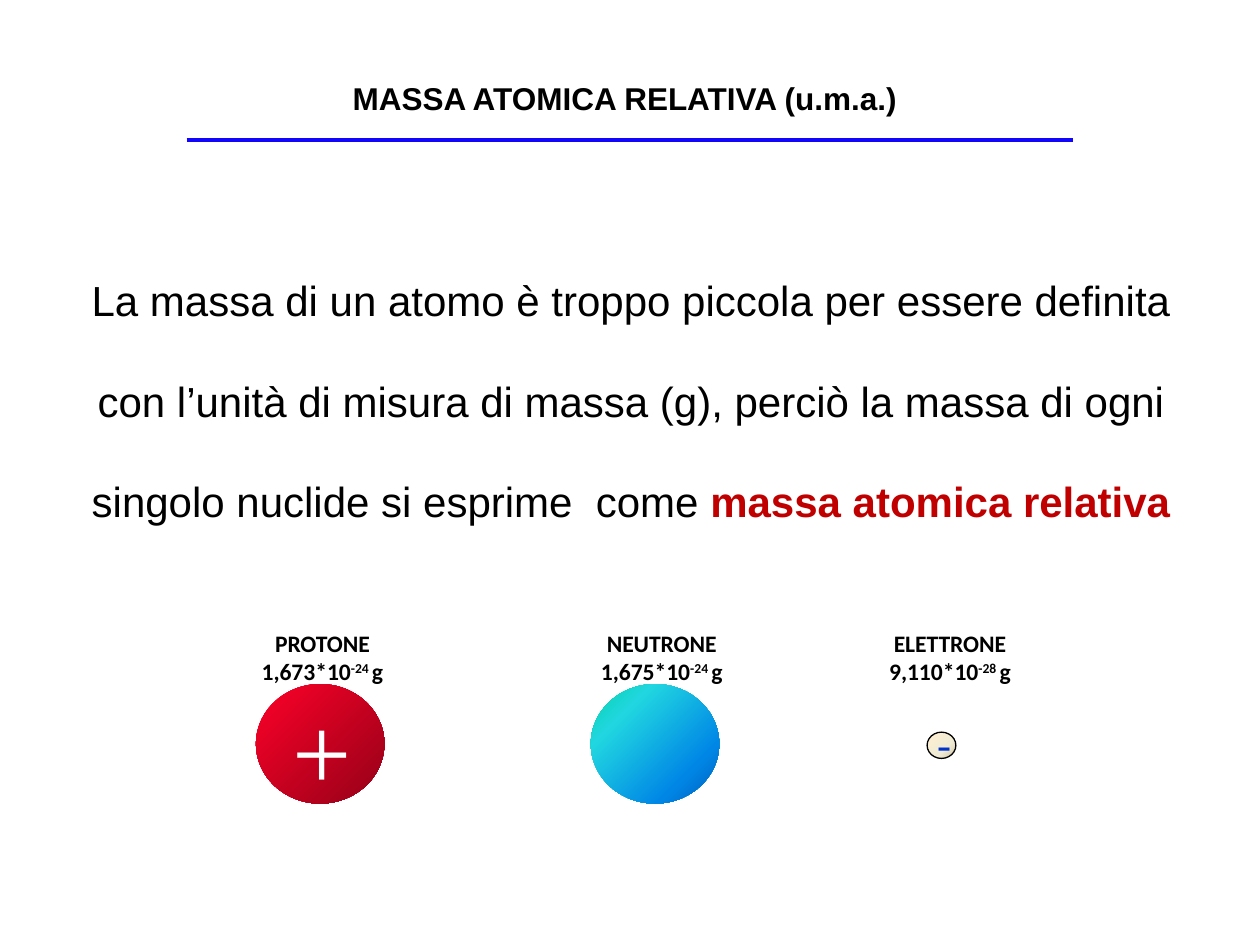
from dataclasses import dataclass

from lxml.etree import SubElement
from pptx import Presentation
from pptx.dml.color import RGBColor as Rgb
from pptx.enum.shapes import MSO_CONNECTOR as Connector, MSO_SHAPE as Shape
from pptx.enum.text import MSO_AUTO_SIZE as AutoSize, PP_ALIGN as Align
from pptx.oxml.ns import qn
from pptx.util import Cm, Pt


@dataclass(frozen=True)
class Theme:
    black: str = "000000"
    white: str = "FFFFFF"
    rule: str = "1206FA"
    accent: str = "C00000"
    minus: str = "0033CC"
    proton: tuple = ((0, "FC0128"), (100, "950118"))
    neutron: tuple = ((0, "03D4A8"), (25, "21D6E0"), (75, "0087E6"), (100, "005CBF"))
    electron: tuple = ((0, "FFEFD1"), (65, "F0EBD5"), (100, "D1C39F"))
    sans: str = "Arial"
    label_font: str = "Calibri"
    sign_font: str = "Times New Roman"
    title_size: float = 18
    body_size: float = 24
    label_size: float = 13.5
    minus_size: float = 24
    plus_size: float = 60


class SlideBuilder:
    """Draws styled elements on the current slide."""

    def __init__(self, slide, theme):
        self.shapes = slide.shapes
        self.theme = theme

    def rule(self, left, right, top):
        line = self.shapes.add_connector(
            Connector.STRAIGHT, Cm(left), Cm(top), Cm(right), Cm(top))
        line.line.color.rgb = Rgb.from_string(self.theme.rule)
        line.line.width = Pt(2.5)
        SubElement(line._element.spPr, qn("a:effectLst"))

    def text(self, bounds, lines, font, size, color=None, bold=False,
             align=Align.CENTER, spacing=None, wrap=True):
        box = self.shapes.add_textbox(*map(Cm, bounds))
        frame = box.text_frame
        frame.word_wrap = wrap
        frame.auto_size = AutoSize.SHAPE_TO_FIT_TEXT
        frame.text = "\n".join(lines)
        for para in frame.paragraphs:
            para.alignment = align
            para.line_spacing = spacing
            for span in para.runs:
                self.format(span, font, size, color, bold)
        return frame.paragraphs

    def format(self, span, font, size, color=None, bold=False):
        span.font.name = font
        span.font.size = Pt(size)
        span.font.bold = bold
        span.font.color.rgb = Rgb.from_string(color or self.theme.black)

    def body(self, bounds, plain, emphasis):
        theme = self.theme
        para = self.text(bounds, [plain], theme.sans, theme.body_size, spacing=2.0)[0]
        span = para.add_run()
        span.text = emphasis
        self.format(span, theme.sans, theme.body_size, theme.accent, True)

    def sphere(self, bounds, stops, outlined=False):
        ball = self.shapes.add_shape(Shape.OVAL, *map(Cm, bounds))
        ball.shadow.inherit = False
        ball.fill.gradient()
        ball.fill.gradient_angle = 315
        stop_list = ball._element.spPr.find(qn("a:gradFill")).find(qn("a:gsLst"))
        for old_stop in list(stop_list):
            stop_list.remove(old_stop)
        for percent, color in stops:
            stop = SubElement(stop_list, qn("a:gs"), pos=str(percent * 1000))
            SubElement(stop, qn("a:srgbClr"), val=color)
        if outlined:
            ball.line.color.rgb = Rgb.from_string(self.theme.black)
            ball.line.width = Pt(0.75)
        else:
            ball.line.fill.background()

    def sign(self, bounds, symbol, size, color):
        self.text(bounds, [symbol], self.theme.sign_font, size, color,
                  align=Align.LEFT, wrap=False)

    def mass_label(self, left, name, mantissa, exponent):
        theme = self.theme
        mass = self.text((left, 12.55, 4.78, 1.42), [name, mantissa + "*10"],
                         theme.label_font, theme.label_size, bold=True)[1]
        for part, baseline in ((exponent + " ", "30000"), ("g", "0")):
            span = mass.add_run()
            span.text = part
            self.format(span, theme.label_font, theme.label_size, bold=True)
            span.font._element.set("baseline", baseline)


def main():
    theme = Theme()
    deck = Presentation()
    deck.slide_width, deck.slide_height = Cm(25.4), Cm(19.05)
    page = SlideBuilder(deck.slides.add_slide(deck.slide_layouts[6]), theme)

    page.rule(3.76, 21.64, 2.82)
    page.text((5.23, 1.47, 14.73, 1.8), ["MASSA ATOMICA RELATIVA (u.m.a.)"],
              theme.sans, theme.title_size, bold=True)
    page.body((1.14, 4.39, 23.16, 6.1),
              "La massa di un atomo è troppo piccola per essere definita con l’unità "
              "di misura di massa (g), perciò la massa di ogni singolo nuclide si "
              "esprime  come ", "massa atomica relativa")

    page.sphere((5.16, 13.79, 2.59, 2.41), theme.proton)
    page.sphere((11.91, 13.79, 2.59, 2.41), theme.neutron)
    page.sphere((18.69, 14.76, 0.58, 0.53), theme.electron, outlined=True)
    page.sign((5.64, 13.69, 1.73, 2.82), "+", theme.plus_size, theme.white)
    page.sign((18.64, 14.33, 0.79, 1.27), "-", theme.minus_size, theme.minus)

    for label in ((4.11, "PROTONE", "1,673", "-24"),
                  (10.95, "NEUTRONE", "1,675", "-24"),
                  (16.76, "ELETTRONE", "9,110", "-28")):
        page.mass_label(*label)
    deck.save("out.pptx")


if __name__ == "__main__":
    main()
